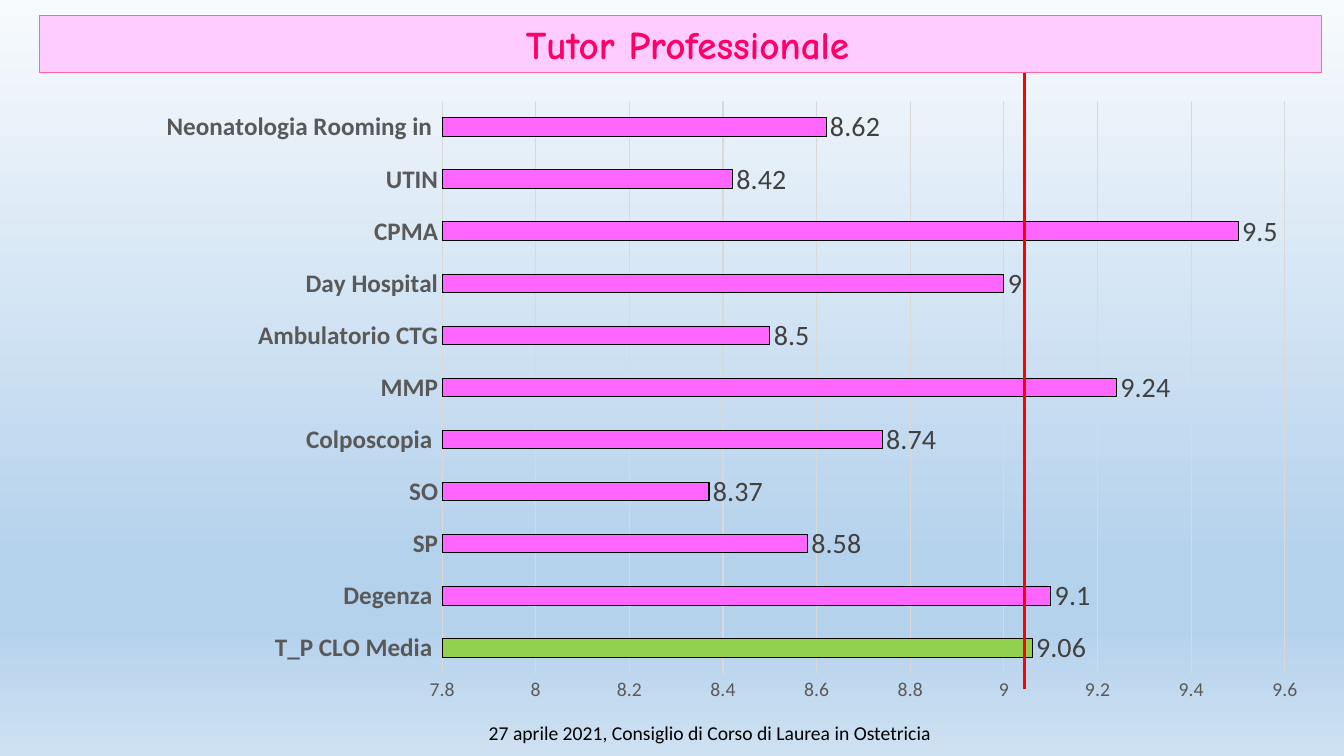
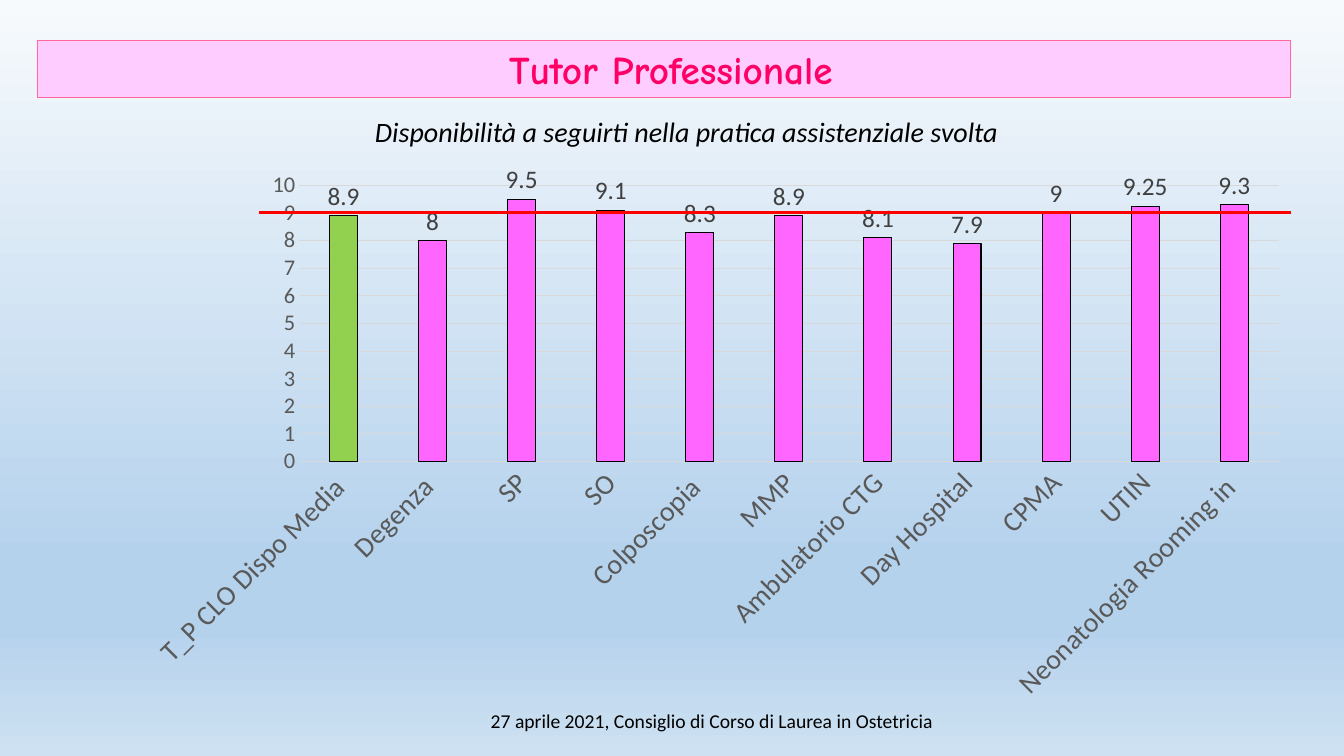
from lxml import etree
from pptx import Presentation
from pptx import util as u
from pptx.chart.data import CategoryChartData
from pptx.dml.color import RGBColor
from pptx.enum import chart as charts, shapes, text
from pptx.oxml import ns

PINK_BAND = RGBColor(0xFF, 0xCC, 0xFF)
PINK_EDGE = RGBColor(0xFF, 0x66, 0x99)
PINK_TITLE = RGBColor(0xFF, 0x00, 0x66)
PINK_BAR = RGBColor(0xFF, 0x66, 0xFF)
GREEN_BAR = RGBColor(0x92, 0xD0, 0x50)
RED = RGBColor(0xFF, 0x00, 0x00)
BLACK = RGBColor(0x00, 0x00, 0x00)
LABEL_GREY = RGBColor(0x40, 0x40, 0x40)
AXIS_GREY = RGBColor(0x59, 0x59, 0x59)
GRID_GREY = RGBColor(0xD9, 0xD9, 0xD9)
SKY_TOP = RGBColor(0xF7, 0xFA, 0xFD)
SKY_MIDDLE = RGBColor(0xB5, 0xD2, 0xEC)
SKY_BOTTOM = RGBColor(0xCE, 0xE1, 0xF2)
SKY = [(0, SKY_TOP), (74, SKY_MIDDLE), (83, SKY_MIDDLE), (100, SKY_BOTTOM)]

BODY_FONT = "Calibri"
TITLE_FONT = "Comic Neue"
TITLE = " Tutor Professionale"
FOOTER = " 27 aprile 2021, Consiglio di Corso di Laurea in Ostetricia"
WARDS = ["Degenza ", "SP", "SO", "Colposcopia ", "MMP", "Ambulatorio CTG",
         "Day Hospital", "CPMA", "UTIN", "Neonatologia Rooming in "]


class Deck:
    def __init__(self):
        self.presentation = Presentation()
        self.presentation.slide_width = u.Inches(13.33)
        self.presentation.slide_height = u.Inches(7.5)
        self.slide = None
        self.paint_background()

    def paint_background(self):
        master = self.presentation.slide_master
        fill = master.background.fill
        fill.gradient()
        fill.gradient_angle = 270
        stops = master.element.find(".//" + ns.qn("a:gsLst"))
        for stop in list(stops):
            stops.remove(stop)
        for percent, color in SKY:
            stop = etree.SubElement(stops, ns.qn("a:gs"), pos=str(percent * 1000))
            etree.SubElement(stop, ns.qn("a:srgbClr"), val=str(color))

    def add_slide(self):
        layout = self.presentation.slide_layouts.get_by_name("Title Only")
        self.slide = self.presentation.slides.add_slide(layout)

    def place(self, shape, left, top, width, height):
        shape.left, shape.top = u.Inches(left), u.Inches(top)
        shape.width, shape.height = u.Inches(width), u.Inches(height)

    def style_font(self, font, size, color, name=BODY_FONT, bold=False, italic=False):
        font.name, font.size = name, u.Pt(size)
        font.bold, font.italic = bold, italic
        font.color.rgb = color

    def style_line(self, line, color, width=0.75):
        line.color.rgb = color
        line.width = u.Pt(width)

    def set_text(self, shape, words, size, color, **style):
        frame = shape.text_frame
        frame.word_wrap = True
        frame.auto_size = text.MSO_AUTO_SIZE.NONE
        frame.vertical_anchor = text.MSO_ANCHOR.MIDDLE
        frame.text = words
        paragraph = frame.paragraphs[0]
        paragraph.alignment = text.PP_ALIGN.CENTER
        self.style_font(paragraph.runs[0].font, size, color, **style)

    def title(self, left, top, width):
        band = self.slide.shapes.title
        self.place(band, left, top, width, 0.57)
        band.fill.solid()
        band.fill.fore_color.rgb = PINK_BAND
        self.style_line(band.line, PINK_EDGE)
        self.set_text(band, TITLE, 28, PINK_TITLE, name=TITLE_FONT, bold=True)

    def text_box(self, words, left, top, width, height, size, italic=False):
        box = self.slide.shapes.add_textbox(0, 0, 0, 0)
        self.place(box, left, top, width, height)
        self.set_text(box, words, size, BLACK, italic=italic)

    def footer(self, left, top, height):
        self.text_box(FOOTER, left, top, 5.24, height, 14)

    def threshold(self, x1, y1, x2, y2):
        line = self.slide.shapes.add_connector(
            shapes.MSO_CONNECTOR.STRAIGHT, *map(u.Inches, (x1, y1, x2, y2)))
        self.style_line(line.line, RED, 2.25)
        etree.SubElement(line.element.spPr, ns.qn("a:effectLst"))

    def bar_chart(self, kind, box, average_name, values, plot_area, gap, label_size, overlap=0):
        data = CategoryChartData()
        data.categories = [average_name] + WARDS
        data.add_series("Valutazione", values)
        chart = self.slide.shapes.add_chart(kind, *map(u.Inches, box), data).chart
        chart.has_legend = chart.has_title = False
        self.style_font(chart.font, 10, BLACK)
        self.set_plot_area(chart, plot_area)

        plot = chart.plots[0]
        plot.vary_by_categories = False
        plot.gap_width, plot.overlap = gap, overlap
        plot.has_data_labels = True
        labels = plot.data_labels
        labels.show_value = True
        labels.position = charts.XL_LABEL_POSITION.OUTSIDE_END
        self.style_font(labels.font, label_size, LABEL_GREY)

        series = plot.series[0]
        for bar, color in ((series, PINK_BAR), (series.points[0], GREEN_BAR)):
            bar.format.fill.solid()
            bar.format.fill.fore_color.rgb = color
            self.style_line(bar.format.line, BLACK)
        return chart

    def set_plot_area(self, chart, plot_area):
        area = chart.element.find(".//" + ns.qn("c:plotArea"))
        for old in area.findall(ns.qn("c:layout")):
            area.remove(old)
        layout = etree.Element(ns.qn("c:layout"))
        area.insert(0, layout)
        manual = etree.SubElement(layout, ns.qn("c:manualLayout"))
        settings = [("layoutTarget", "inner"), ("xMode", "edge"), ("yMode", "edge")]
        for tag, value in settings + list(zip("xywh", plot_area)):
            etree.SubElement(manual, ns.qn("c:" + tag), val=str(value))

    def axes(self, chart, category_size, value_size, scale, bold=False, rotation=None):
        categories, values = chart.category_axis, chart.value_axis
        for axis, size in ((categories, category_size), (values, value_size)):
            axis.major_tick_mark = axis.minor_tick_mark = charts.XL_TICK_MARK.NONE
            self.style_font(axis.tick_labels.font, size, AXIS_GREY)
        categories.tick_labels.font.bold = bold
        categories.has_major_gridlines = False
        self.style_line(categories.format.line, GRID_GREY)
        if rotation is not None:
            body = chart.element.find(".//" + ns.qn("c:catAx") + "//" + ns.qn("a:bodyPr"))
            body.set("rot", str(rotation * 60000))
            body.set("vert", "horz")
        values.minimum_scale, values.maximum_scale, values.major_unit = scale
        values.format.line.fill.background()
        values.has_major_gridlines = True
        self.style_line(values.major_gridlines.format.line, GRID_GREY)


def overall_slide(deck):
    deck.add_slide()
    deck.title(0.39, 0.15, 12.72)
    deck.footer(4.4, 6.94, 0.66)
    chart = deck.bar_chart(
        charts.XL_CHART_TYPE.BAR_CLUSTERED, (1.25, 0.94, 11.62, 6.18), "T_P CLO Media ",
        (9.06, 9.1, 8.58, 8.37, 8.74, 9.24, 8.5, 9, 9.5, 8.42, 8.62),
        (0.27, 0.01, 0.72, 0.92), gap=182, label_size=20)
    deck.axes(chart, 18, 14, (7.8, 9.6, 0.2), bold=True)
    deck.threshold(10.16, 0.72, 10.16, 6.84)


def availability_slide(deck):
    deck.add_slide()
    deck.title(0.37, 0.4, 12.43)
    deck.text_box("Disponibilità a seguirti nella pratica assistenziale svolta",
                  1.8, 1.08, 10.02, 0.44, 20, italic=True)
    deck.footer(4.42, 6.95, 0.4)
    chart = deck.bar_chart(
        charts.XL_CHART_TYPE.COLUMN_CLUSTERED, (1.23, 1.62, 11.57, 5.48), "T_P CLO Dispo Media ",
        (8.9, 8, 9.5, 9.1, 8.3, 8.9, 8.1, 7.9, 9, 9.25, 9.3),
        (0.15, 0.04, 0.84, 0.5), gap=219, label_size=18, overlap=-27)
    deck.axes(chart, 20, 16, (0, 10, 1), rotation=-45)
    deck.threshold(2.57, 2.11, 12.8, 2.11)


def main():
    deck = Deck()
    overall_slide(deck)
    availability_slide(deck)
    deck.presentation.save("out.pptx")


if __name__ == "__main__":
    main()
